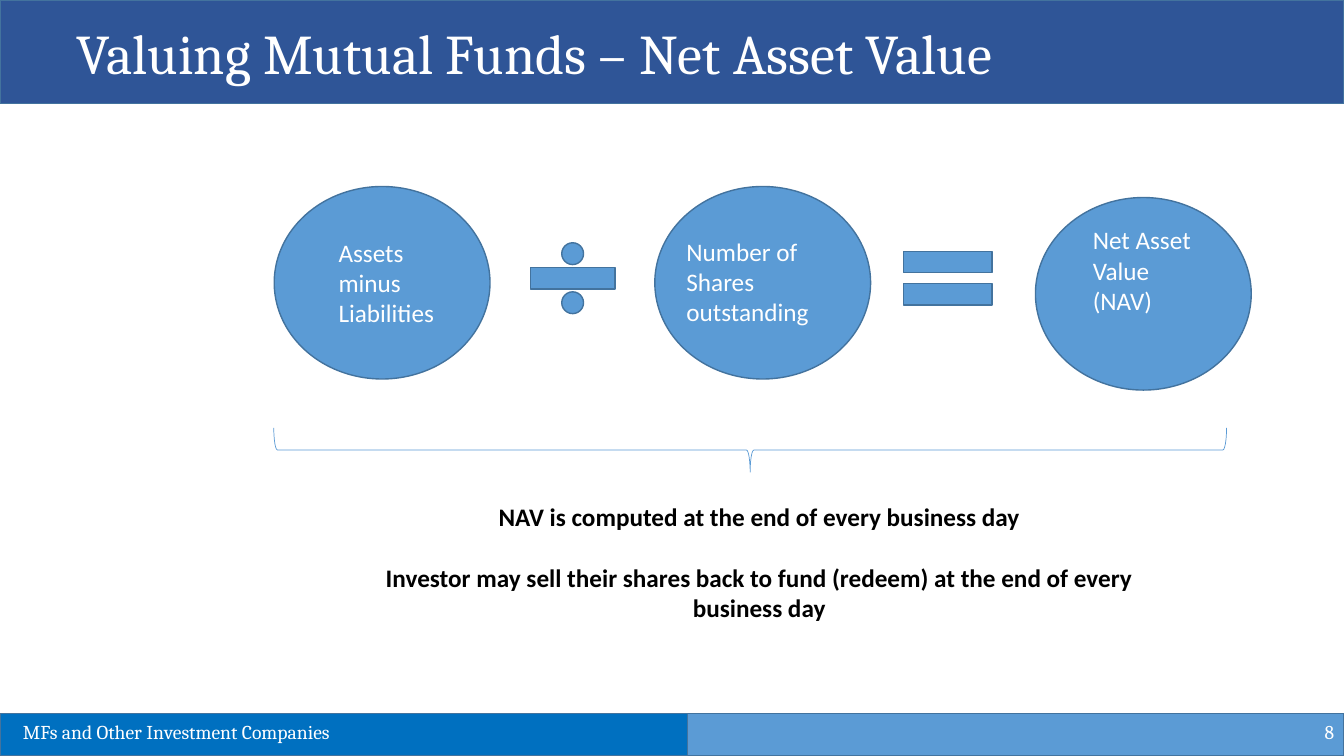
from dataclasses import dataclass

from pptx import Presentation
from pptx.dml.color import RGBColor
from pptx.enum.shapes import MSO_SHAPE
from pptx.enum.text import MSO_ANCHOR, MSO_AUTO_SIZE, PP_ALIGN
from pptx.util import Inches, Pt

RECT, OVAL = MSO_SHAPE.RECTANGLE, MSO_SHAPE.OVAL
DIVIDE, EQUAL = MSO_SHAPE.MATH_DIVIDE, MSO_SHAPE.MATH_EQUAL
BRACE = MSO_SHAPE.RIGHT_BRACE
LEFT, CENTER, RIGHT = PP_ALIGN.LEFT, PP_ALIGN.CENTER, PP_ALIGN.RIGHT
TOP, MIDDLE = MSO_ANCHOR.TOP, MSO_ANCHOR.MIDDLE
NO_FIT = MSO_AUTO_SIZE.NONE


@dataclass(frozen=True)
class Theme:
    navy: str = "2F5597"
    blue: str = "0070C0"
    sky: str = "5B9BD5"
    edge: str = "43739E"
    white: str = "FFFFFF"
    black: str = "000000"
    serif: str = "Cambria"
    sans: str = "Calibri"
    head: int = 40
    body: int = 18
    foot: int = 14


THEME = Theme()

# Content
TITLE = "Valuing Mutual Funds – Net Asset Value"
FOOTER = "MFs and Other Investment Companies"
NUMBER = "8"
# label, circle top, label box
TERMS = [
    ("Assets minus Liabilities", 1.85, (3.26, 2.3, 1.3, 1.01)),
    ("Number of Shares outstanding", 1.85, (6.71, 2.29, 1.71, 1.01)),
    ("Net Asset Value (NAV)", 1.96, (10.74, 2.18, 1.3, 1.31)),
]
SIGNS = [
    (DIVIDE, (5.11, 2.3, 1.14, 0.92)),
    (EQUAL, (8.8, 2.31, 1.2, 0.9)),
]
NOTES = [
    "NAV is computed at the end of every business day",
    "Investor may sell their shares back to fund (redeem) "
    "at the end of every business day",
]

# Layout
WIDTH, HEIGHT = 13.33, 7.5
HEAD_H, FOOT_H, SPLIT = 1.03, 0.42, 6.82
FOOT_Y = HEIGHT - FOOT_H
TERM_X, TERM_STEP, TERM_W, TERM_H = 2.72, 3.775, 2.14, 1.91
BRACE_BOX = (7.22, -0.26, 0.44, 9.45)


def color(code):
    return RGBColor.from_string(code)


def add_shape(slide, kind, box, fill=None, line=THEME.edge, weight=1):
    shape = slide.shapes.add_shape(kind, *map(Inches, box))
    shape.shadow.inherit = False
    if fill:
        shape.fill.solid()
        shape.fill.fore_color.rgb = color(fill)
    else:
        shape.fill.background()
    shape.line.color.rgb = color(line)
    shape.line.width = Pt(weight)
    return shape


def set_text(shape, lines, face, size, ink=THEME.white, align=LEFT,
             anchor=TOP, bold=False, gap=0):
    frame = shape.text_frame
    frame.word_wrap = True
    frame.auto_size = NO_FIT
    frame.vertical_anchor = anchor
    frame.text = "\n".join(lines)
    for i, para in enumerate(frame.paragraphs):
        para.alignment = align
        para.space_before = Pt(gap if i else 0)
        para.font.name = face
        para.font.size = Pt(size)
        para.font.bold = bold
        para.font.color.rgb = color(ink)


def add_text(slide, box, lines, face, size, **style):
    shape = slide.shapes.add_textbox(*map(Inches, box))
    set_text(shape, lines, face, size, **style)


def add_frame(slide):
    # Bands
    add_shape(slide, RECT, (0, 0, WIDTH, HEAD_H), THEME.navy)
    add_shape(slide, RECT, (0, FOOT_Y, SPLIT, FOOT_H), THEME.blue)
    add_shape(slide, RECT, (SPLIT, FOOT_Y, WIDTH - SPLIT, FOOT_H), THEME.sky)

    # Title, raised above its band
    title = slide.shapes.title
    title.left, title.top = Inches(0.66), Inches(0.13)
    title.width, title.height = Inches(12.08), Inches(0.77)
    set_text(title, [TITLE], THEME.serif, THEME.head)
    slide.shapes._spTree.append(title._element)

    # Footer
    add_text(slide, (10.33, 7.06, 3, 0.4), [NUMBER], THEME.serif, THEME.foot,
             align=RIGHT, anchor=MIDDLE)
    add_text(slide, (0.13, 7.09, 5.54, 0.34), [FOOTER], THEME.serif,
             THEME.foot)


def add_formula(slide):
    # Terms
    for i, (label, top, box) in enumerate(TERMS):
        left = TERM_X + i * TERM_STEP
        add_shape(slide, OVAL, (left, top, TERM_W, TERM_H), THEME.sky)
        add_text(slide, box, [label], THEME.sans, THEME.body)

    # Operators
    for kind, box in SIGNS:
        add_shape(slide, kind, box, THEME.sky)


def add_notes(slide):
    # Brace and the remarks under it
    brace = add_shape(slide, BRACE, BRACE_BOX, line=THEME.sky, weight=0.5)
    brace.rotation = 90
    add_text(slide, (3.64, 4.92, 7.78, 1.31), NOTES, THEME.sans, THEME.body,
             ink=THEME.black, align=CENTER, bold=True, gap=22)


def main():
    deck = Presentation()
    deck.slide_width, deck.slide_height = Inches(WIDTH), Inches(HEIGHT)
    slide = deck.slides.add_slide(deck.slide_layouts[5])
    add_frame(slide)
    add_formula(slide)
    add_notes(slide)
    deck.save("out.pptx")


if __name__ == "__main__":
    main()
